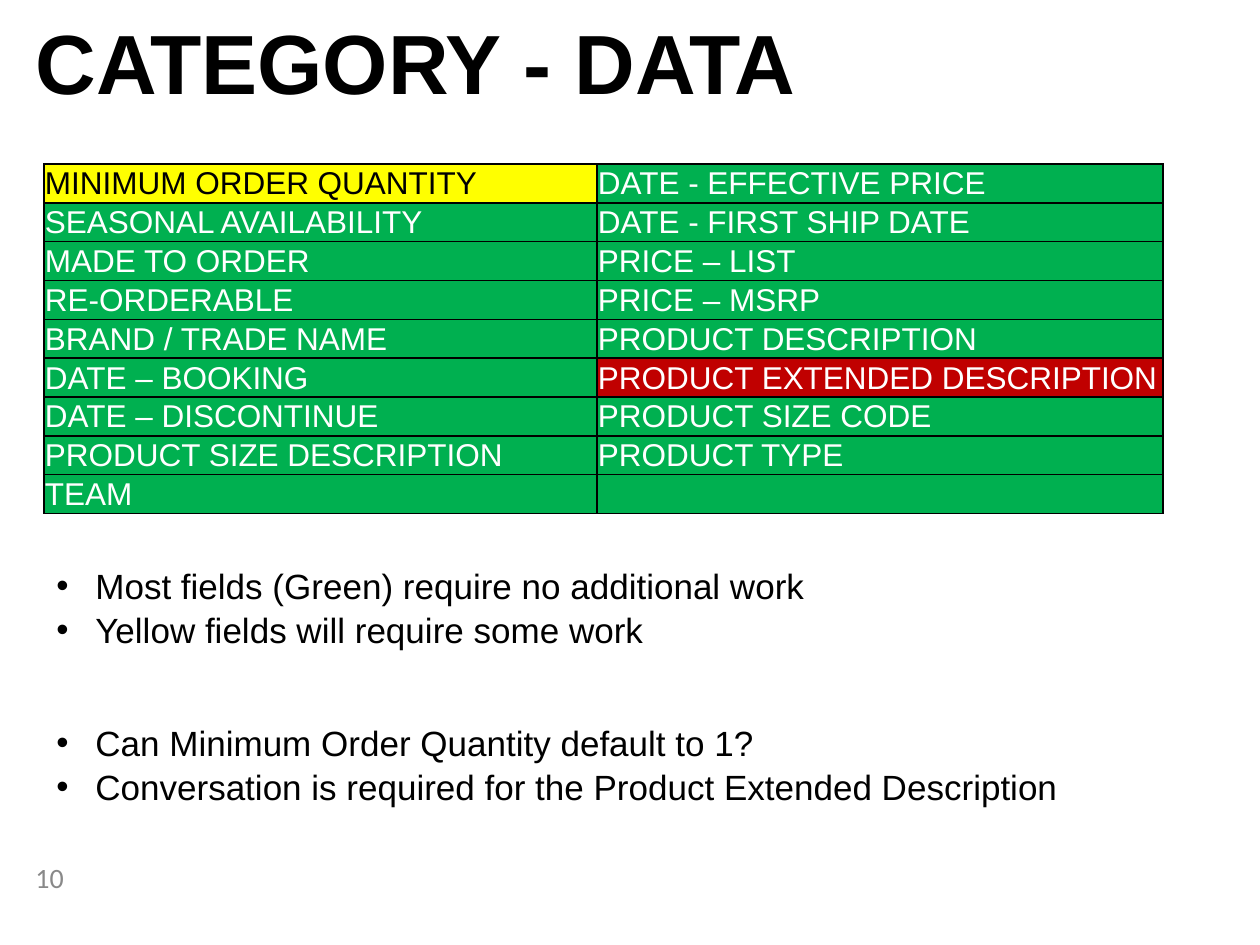
import pptx
import pptx.dml.color
import pptx.enum.text
import pptx.oxml
import pptx.oxml.ns
import pptx.util

RGB = pptx.dml.color.RGBColor
BLACK = RGB(0x00, 0x00, 0x00)
WHITE = RGB(0xFF, 0xFF, 0xFF)
GRAY = RGB(0x89, 0x89, 0x89)
GREEN = RGB(0x00, 0xB0, 0x50)
YELLOW = RGB(0xFF, 0xFF, 0x00)
RED = RGB(0xC0, 0x00, 0x00)

MIDDLE = pptx.enum.text.MSO_ANCHOR.MIDDLE
TOP = pptx.enum.text.MSO_ANCHOR.TOP
GROW = pptx.enum.text.MSO_AUTO_SIZE.SHAPE_TO_FIT_TEXT

FIELDS = [
    ("MINIMUM ORDER QUANTITY", "DATE - EFFECTIVE PRICE"),
    ("SEASONAL AVAILABILITY", "DATE - FIRST SHIP DATE"),
    ("MADE TO ORDER", "PRICE – LIST"),
    ("RE-ORDERABLE", "PRICE – MSRP"),
    ("BRAND / TRADE NAME", "PRODUCT DESCRIPTION"),
    ("DATE – BOOKING", "PRODUCT EXTENDED DESCRIPTION"),
    ("DATE – DISCONTINUE", "PRODUCT SIZE CODE"),
    ("PRODUCT SIZE DESCRIPTION", "PRODUCT TYPE"),
    ("TEAM", ""),
]
MARKS = {
    "MINIMUM ORDER QUANTITY": (YELLOW, BLACK),
    "PRODUCT EXTENDED DESCRIPTION": (RED, WHITE),
}


def px(count):
    return pptx.util.Emu(round(count * 914400 / 126))


class Page:
    def __init__(self, deck, face="Arial"):
        self.slide = deck.slides.add_slide(deck.slide_layouts[6])
        self.face = face

    def style(self, para, size, color=BLACK, bold=False, face=None):
        font = para.font
        font.name = face or self.face
        font.size = pptx.util.Pt(size)
        font.bold = bold
        font.color.rgb = color

    def text(self, box, words, size, anchor=TOP, lead=None, **look):
        shape = self.slide.shapes.add_textbox(*map(px, box))
        frame = shape.text_frame
        frame.word_wrap = True
        frame.vertical_anchor = anchor
        para = frame.paragraphs[0]
        para.text = words
        if lead:
            para.line_spacing = pptx.util.Pt(lead)
        self.style(para, size, **look)

    def bullets(self, box, lines, size=20, indent=39):
        shape = self.slide.shapes.add_textbox(*map(px, box))
        frame = shape.text_frame
        frame.word_wrap = True
        frame.auto_size = GROW
        frame.text = "\n".join(lines)
        for para in frame.paragraphs:
            para.line_spacing = 1.05
            props = para._p.get_or_add_pPr()
            props.set("marL", str(px(indent)))
            props.set("indent", str(-px(indent)))
            for tag, key, value in (("buFont", "typeface", self.face),
                                    ("buChar", "char", "•")):
                mark = pptx.oxml.ns.qn("a:" + tag)
                props.append(props.makeelement(mark, {key: value}))
            self.style(para, size)

    def border(self, cell):
        """Draw a black one-point line on all four sides."""
        props = cell._tc.get_or_add_tcPr()
        space = pptx.oxml.ns.nsdecls("a")
        for spot, side in enumerate("LRTB"):
            line = pptx.oxml.parse_xml(
                f'<a:ln{side} {space} w="12700"><a:solidFill>'
                f'<a:srgbClr val="{BLACK}"/></a:solidFill></a:ln{side}>')
            props.insert(spot, line)

    def table(self, left, top, widths, height, rows, size=18):
        frame = self.slide.shapes.add_table(
            len(rows), len(widths), px(left), px(top),
            px(sum(widths)), px(height * len(rows)))
        grid = frame.table
        for col, width in zip(grid.columns, widths):
            col.width = px(width)
        for row, names in zip(grid.rows, rows):
            row.height = px(height)
            for cell, name in zip(row.cells, names):
                fill, ink = MARKS.get(name, (GREEN, WHITE))
                cell.margin_left = cell.margin_right = px(1)
                cell.margin_top, cell.margin_bottom = px(1), 0
                cell.vertical_anchor = MIDDLE
                cell.text = name
                self.style(cell.text_frame.paragraphs[0], size, ink)
                cell.fill.solid()
                cell.fill.fore_color.rgb = fill
                self.border(cell)


def main():
    deck = pptx.Presentation()
    deck.slide_width, deck.slide_height = px(1260), px(945)
    page = Page(deck)
    page.text((23, 852, 294, 50), "10", 16, MIDDLE,
              color=GRAY, face="Calibri")
    page.text((23, 30, 1203, 81), "CATEGORY - DATA", 48, lead=43, bold=True)
    page.table(44, 164, (553, 566), 33, FIELDS)
    page.bullets((44, 713, 1034, 97), [
        "Can Minimum Order Quantity default to 1?",
        "Conversation is required for the Product Extended Description"])
    page.bullets((44, 556, 893, 97), [
        "Most fields (Green) require no additional work",
        "Yellow fields will require some work"])
    deck.save("out.pptx")


if __name__ == "__main__":
    main()
